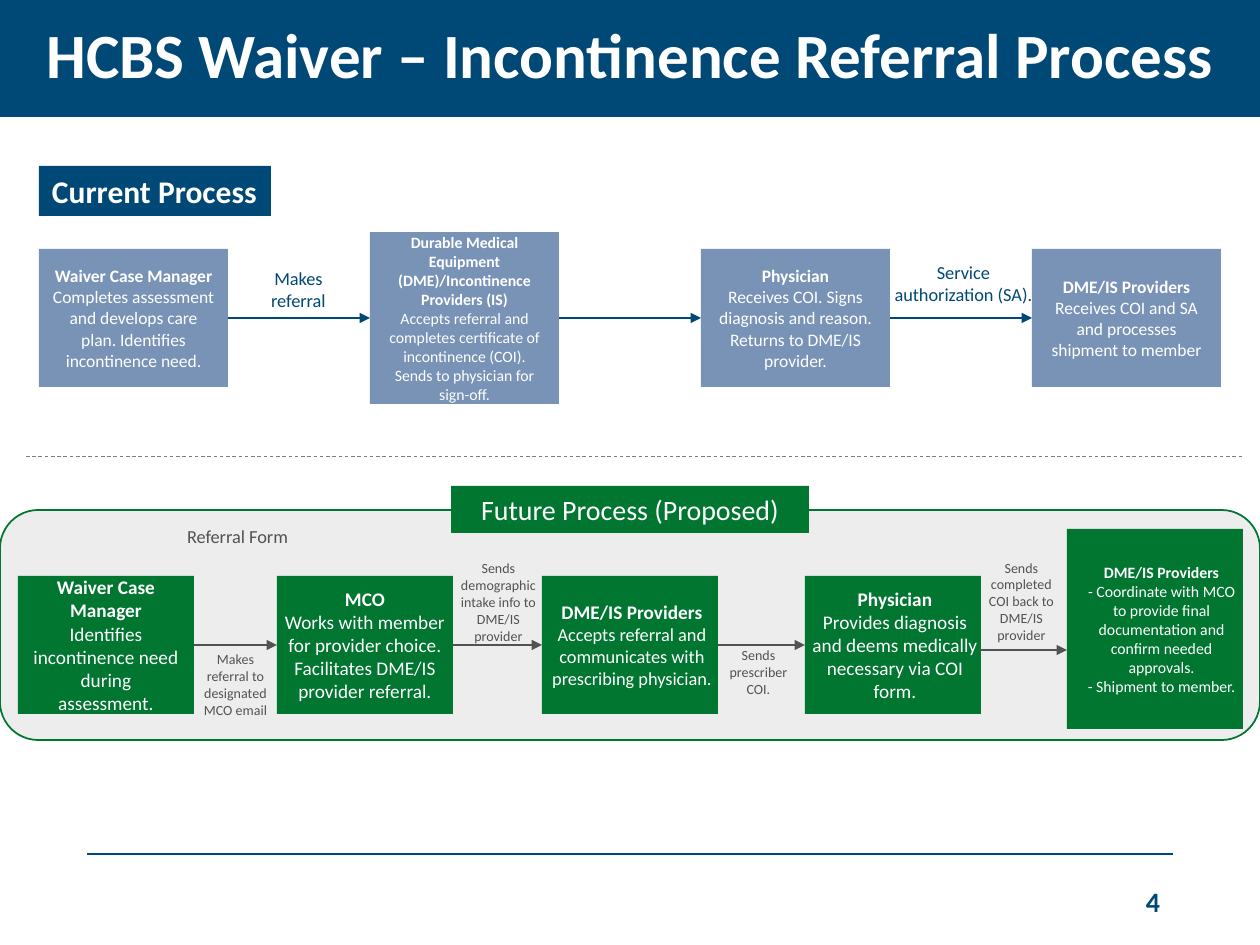
from lxml import etree
from pptx import Presentation
from pptx.dml.color import RGBColor
from pptx.enum.dml import MSO_LINE
from pptx.enum.shapes import MSO_CONNECTOR, MSO_SHAPE
from pptx.enum.text import MSO_ANCHOR, MSO_AUTO_SIZE, PP_ALIGN
from pptx.oxml.ns import qn
from pptx.util import Emu, Pt

PX_PER_INCH = 126
FONT = "Calibri"
COLORS = {
    "navy": "004875", "steel": "7993B7", "green": "007630", "panel": "EDEDED",
    "gray": "525252", "divider": "7C7C7C", "white": "FFFFFF",
}
RIGHT_SIDE, LEFT_SIDE = 3, 1
STEP_INSETS = (13, 6, 13, 6)
LABEL_INSETS = (0, 6, 0, 6)


def px(value):
    return Emu(round(value * 914400 / PX_PER_INCH))


def color(name):
    return RGBColor.from_string(COLORS[name])


def write(frame, lines, size, ink, bold=False, align=PP_ALIGN.CENTER,
          insets=STEP_INSETS, anchor=MSO_ANCHOR.MIDDLE, wrap=True):
    """Fill a text frame; bold may be one flag or one flag per line."""
    frame.auto_size = MSO_AUTO_SIZE.NONE
    frame.word_wrap = wrap
    frame.vertical_anchor = anchor
    (frame.margin_left, frame.margin_top,
     frame.margin_right, frame.margin_bottom) = map(px, insets)
    flags = bold if isinstance(bold, list) else [bold] * len(lines)
    frame.text = "\n".join(lines)
    for para, flag in zip(frame.paragraphs, flags):
        para.alignment = align
        for span in para.runs:
            span.font.name, span.font.size, span.font.bold = FONT, Pt(size), flag
            span.font.color.rgb = color(ink)


def add_block(page, box, fill, outline=None, kind=MSO_SHAPE.RECTANGLE):
    block = page.shapes.add_shape(kind, *map(px, box))
    block.shadow.inherit = False
    block.fill.solid()
    block.fill.fore_color.rgb = color(fill)
    if outline:
        block.line.color.rgb = color(outline)
        block.line.width = Pt(1)
    else:
        block.line.fill.background()
    return block


def add_label(page, box, lines, size, ink, **style):
    label = page.shapes.add_textbox(*map(px, box))
    write(label.text_frame, lines, size, ink,
          **{"insets": LABEL_INSETS, "anchor": MSO_ANCHOR.TOP, **style})


def add_rule(page, start, end, ink, width, arrow=False):
    rule = page.shapes.add_connector(MSO_CONNECTOR.STRAIGHT, *map(px, start + end))
    rule.line.color.rgb = color(ink)
    rule.line.width = Pt(width)
    if arrow:
        etree.SubElement(rule.line._get_or_add_ln(), qn("a:tailEnd"), type="triangle")
    etree.SubElement(rule._element.spPr, qn("a:effectLst"))
    return rule


def add_step(page, box, fill, heading, details, size, detail_size=None, insets=STEP_INSETS):
    step = add_block(page, box, fill)
    write(step.text_frame, [heading] + details, size, "white",
          bold=[True] + [False] * len(details), insets=insets)
    for para in step.text_frame.paragraphs[1:]:
        for span in para.runs:
            span.font.size = Pt(detail_size or size)
    return step


def join_steps(page, first, second, ink):
    arrow = add_rule(page, (0, 0), (0, 0), ink, 1.5, arrow=True)
    arrow.begin_connect(first, RIGHT_SIDE)
    arrow.end_connect(second, LEFT_SIDE)


def title_band(page, box):
    title = page.shapes.title
    title.left, title.top, title.width, title.height = map(px, box)
    title.fill.solid()
    title.fill.fore_color.rgb = color("navy")
    write(title.text_frame, ["HCBS Waiver – Incontinence Referral Process"], 36, "white", bold=True)
    title.text_frame.paragraphs[0].line_spacing = 0.9


def current_process(page, box):
    left, top, width, height = box
    heading = add_block(page, (left, top, 232, 50), "navy")
    write(heading.text_frame, ["Current Process"], 18, "white", bold=True,
          align=PP_ALIGN.LEFT, anchor=MSO_ANCHOR.TOP, wrap=False)

    steps = [
        ("Waiver Case Manager",
         "Completes assessment and develops care plan. Identifies incontinence need.", 138, 10),
        ("Durable Medical Equipment (DME)/Incontinence Providers (IS)",
         "Accepts referral and completes certificate of incontinence (COI). "
         "Sends to physician for sign-off.", 172, 9),
        ("Physician",
         "Receives COI. Signs diagnosis and reason. Returns to DME/IS provider.", 138, 10),
        ("DME/IS Providers", "Receives COI and SA and processes shipment to member", 138, 10),
    ]
    step_width = 189
    pitch = (width - step_width) / (len(steps) - 1)
    middle = top + height - 86
    blocks = [
        add_step(page, (left + i * pitch, middle - tall / 2, step_width, tall),
                 "steel", name, [detail], size)
        for i, (name, detail, tall, size) in enumerate(steps)
    ]
    for first, second in zip(blocks, blocks[1:]):
        join_steps(page, first, second, "navy")

    add_label(page, (left + 196, top + 95, 127, 57), ["Makes", "referral"], 10.5, "navy")
    add_label(page, (left + 854, top + 89, 141, 57),
              ["Service", "authorization (SA)."], 10.5, "navy")


def future_process(page, box):
    left, top, width, height = box
    add_block(page, box, "panel", "green", MSO_SHAPE.ROUNDED_RECTANGLE)
    heading = add_block(page, (left + (width - 358) / 2, top - 24, 358, 47), "green")
    write(heading.text_frame, ["Future Process (Proposed)"], 16, "white")
    add_label(page, (left + 139, top + 9, 197, 35), ["Referral Form"], 10.5, "gray")

    step_top, step_height, step_width = top + 66, 138, 176
    steps = [
        (18, "Waiver Case Manager", "Identifies incontinence need during assessment.",
         11, STEP_INSETS),
        (277, "MCO", "Works with member for provider choice. Facilitates DME/IS provider referral.",
         11, (6, 6, 6, 6)),
        (542, "DME/IS Providers",
         "Accepts referral and communicates with prescribing physician.", 10.5, (4, 6, 0, 6)),
        (805, "Physician", "Provides diagnosis and deems medically necessary via COI form.",
         11, (4, 6, 0, 6)),
    ]
    blocks = [
        add_step(page, (left + x, step_top, step_width, step_height),
                 "green", name, [detail], 11, detail_size, insets)
        for x, name, detail, detail_size, insets in steps
    ]
    for first, second in zip(blocks, blocks[1:]):
        join_steps(page, first, second, "gray")

    last_left = left + 1067
    add_step(page, (last_left, top + 19, step_width, 200), "green", "DME/IS Providers",
             ["- Coordinate with MCO to provide final documentation and confirm needed approvals.",
              "- Shipment to member."], 9, insets=(13, 6, 0, 6))
    add_rule(page, (left + 979, top + 140), (last_left, top + 140), "gray", 1.5, arrow=True)

    notes = [
        ((199, 135, 73, 81), ["Makes", "referral to designated MCO email"]),
        ((460, 44, 77, 97), ["Sends demographic intake info to DME/IS provider"]),
        ((722, 131, 73, 63), ["Sends prescriber COI."]),
        ((985, 43, 73, 97), ["Sends completed COI back to DME/IS provider"]),
    ]
    for (x, y, wide, tall), lines in notes:
        add_label(page, (left + x, top + y, wide, tall), lines, 8, "gray")


def footer(page, box):
    left, top, width, height = box
    add_rule(page, (left, top), (left + width, top), "navy", 1)
    add_label(page, (left + width - 284, top + height - 50, 284, 50), ["4"], 16, "navy",
              bold=True, align=PP_ALIGN.RIGHT, insets=STEP_INSETS, anchor=MSO_ANCHOR.MIDDLE)


def main():
    deck = Presentation()
    deck.slide_width, deck.slide_height = px(1260), px(945)
    page = deck.slides.add_slide(deck.slide_layouts.get_by_name("Title Only"))
    title_band(page, (0, 0, 1260, 117))
    current_process(page, (39, 166, 1182, 238))
    divider = add_rule(page, (26, 456), (1243, 456), "divider", 0.5)
    divider.line.dash_style = MSO_LINE.DASH
    future_process(page, (0, 510, 1260, 230))
    footer(page, (87, 854, 1086, 72))
    deck.save("out.pptx")


if __name__ == "__main__":
    main()
